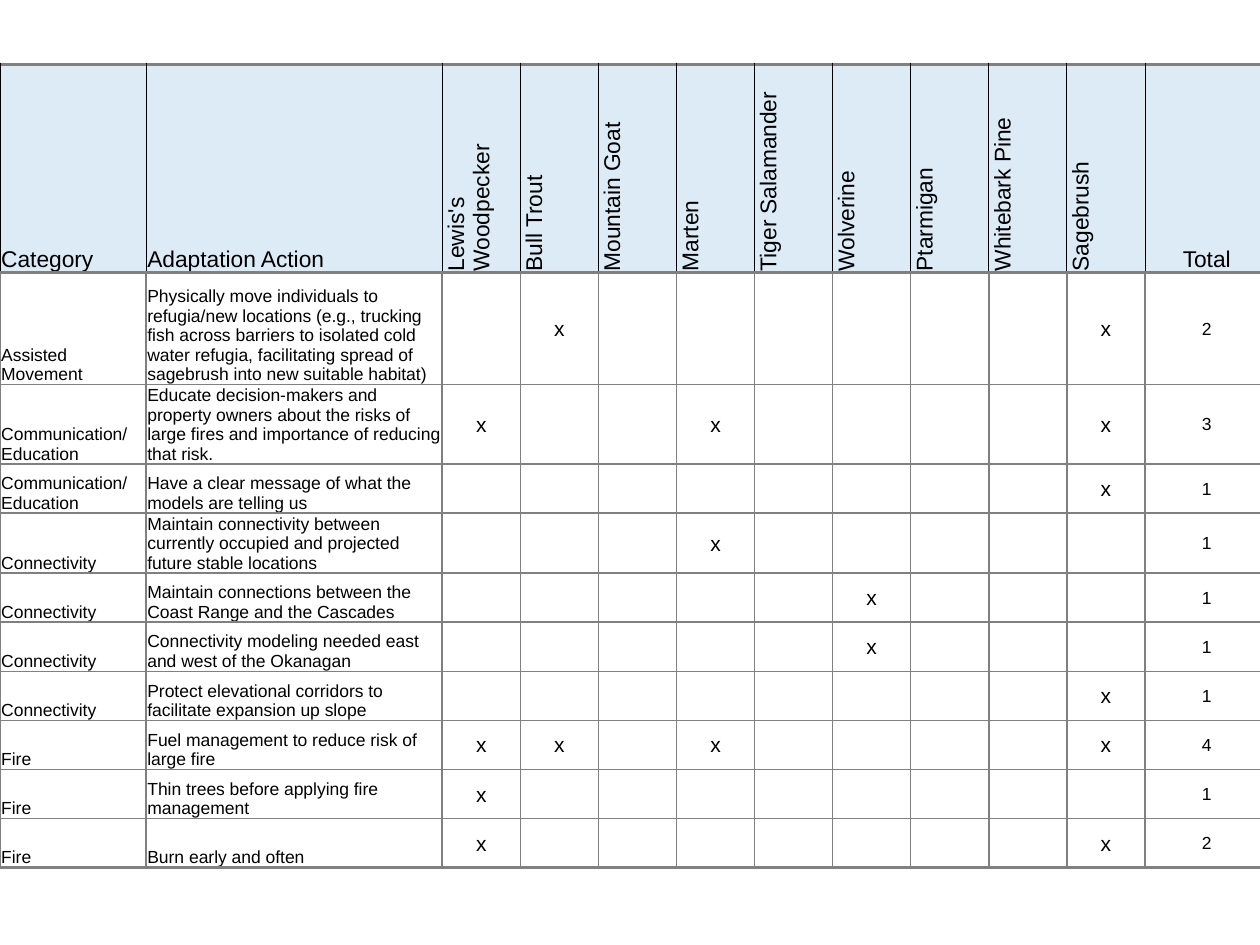
from lxml.etree import SubElement
from pptx import Presentation
from pptx.dml.color import RGBColor
from pptx.enum.text import MSO_ANCHOR as ANCHOR, PP_ALIGN as ALIGN
from pptx.oxml.ns import qn
from pptx.util import Inches, Pt

BLACK = RGBColor(0x00, 0x00, 0x00)
GRAY = RGBColor(0x80, 0x80, 0x80)
PALE_BLUE = RGBColor(0xDD, 0xEB, 0xF7)

SPECIES = ["Lewis's Woodpecker", "Bull Trout", "Mountain Goat", "Marten",
           "Tiger Salamander", "Wolverine", "Ptarmigan", "Whitebark Pine",
           "Sagebrush"]
ACTIONS = [
    ("Assisted Movement",
     "Physically move individuals to refugia/new locations (e.g., trucking "
     "fish across barriers to isolated cold water refugia, facilitating "
     "spread of sagebrush into new suitable habitat)",
     ["Bull Trout", "Sagebrush"]),
    ("Communication/ Education",
     "Educate decision-makers and property owners about the risks of large "
     "fires and importance of reducing that risk.",
     ["Lewis's Woodpecker", "Marten", "Sagebrush"]),
    ("Communication/ Education",
     "Have a clear message of what the models are telling us",
     ["Sagebrush"]),
    ("Connectivity",
     "Maintain connectivity between currently occupied and projected future "
     "stable locations",
     ["Marten"]),
    ("Connectivity",
     "Maintain connections between the Coast Range and the Cascades",
     ["Wolverine"]),
    ("Connectivity",
     "Connectivity modeling needed east and west of the Okanagan",
     ["Wolverine"]),
    ("Connectivity",
     "Protect elevational corridors to facilitate expansion up slope",
     ["Sagebrush"]),
    ("Fire", "Fuel management to reduce risk of large fire",
     ["Lewis's Woodpecker", "Bull Trout", "Marten", "Sagebrush"]),
    ("Fire", "Thin trees before applying fire management",
     ["Lewis's Woodpecker"]),
    ("Fire", "Burn early and often", ["Lewis's Woodpecker", "Sagebrush"]),
]

grid = [["Category", "Adaptation Action", *SPECIES, "Total"]]
for category, action, helped in ACTIONS:
    marks = ["x" if name in helped else "" for name in SPECIES]
    grid.append([category, action, *marks, str(len(helped))])

column_widths = [1.16, 2.35] + [0.62] * len(SPECIES) + [0.98]
row_heights = [1.54, 0.89] + [0.39] * (len(ACTIONS) - 1)
rule_weights = [2.25, 1.5] + [1] * (len(ACTIONS) - 1) + [2.25]
total_column = len(column_widths) - 1

CELL_FORMAT = {"margin_left": Inches(0.01), "margin_right": Inches(0.01),
               "margin_top": Inches(0.01), "margin_bottom": 0}
TABLE_FORMAT = {"first_row": False, "horz_banding": False}


def set_attributes(target, values):
    for key, value in values.items():
        setattr(target, key, value)


def add_border(cell, side, color, weight):
    line = SubElement(cell._tc.get_or_add_tcPr(), qn(f"a:ln{side}"),
                      w=str(Pt(weight)))
    fill = SubElement(line, qn("a:solidFill"))
    SubElement(fill, qn("a:srgbClr"), val=str(color))


presentation = Presentation()
presentation.slide_width = Inches(10)
presentation.slide_height = Inches(7.5)
slide = presentation.slides.add_slide(presentation.slide_layouts[6])

frame = slide.shapes.add_table(len(grid), len(column_widths), 0, Inches(0.51),
                               Inches(10.04), Inches(6.35))
matrix = frame.table
set_attributes(matrix, TABLE_FORMAT)
for column, width in zip(matrix.columns, column_widths):
    column.width = Inches(width)
for row, height in zip(matrix.rows, row_heights):
    row.height = Inches(height)
frame.height = Inches(6.35)

for r, texts in enumerate(grid):
    header = r == 0
    for c, text in enumerate(texts):
        cell = matrix.cell(r, c)
        is_species = 2 <= c < total_column
        set_attributes(cell, CELL_FORMAT)
        if header and is_species:
            cell._tc.get_or_add_tcPr().set("vert", "vert270")
        else:
            centred = not header and c >= 2
            cell.vertical_anchor = ANCHOR.MIDDLE if centred else ANCHOR.BOTTOM

        side_color, side_weight = (BLACK, 0.5) if header else (GRAY, 1)
        add_border(cell, "L", side_color, side_weight)
        add_border(cell, "R", side_color, side_weight)
        add_border(cell, "T", GRAY, rule_weights[r])
        add_border(cell, "B", GRAY, rule_weights[r + 1])
        if header:
            cell.fill.solid()
            cell.fill.fore_color.rgb = PALE_BLUE
        else:
            cell.fill.background()

        cell.text = text
        paragraph = cell.text_frame.paragraphs[0]
        if c == total_column or (is_species and not header):
            paragraph.alignment = ALIGN.CENTER
        size = 13 if header else 12 if is_species else 10
        text_font = paragraph.runs[0].font if text else paragraph.font
        set_attributes(text_font, {"name": "Arial", "size": Pt(size),
                                   "bold": False})
        text_font.color.rgb = BLACK

presentation.save("out.pptx")
